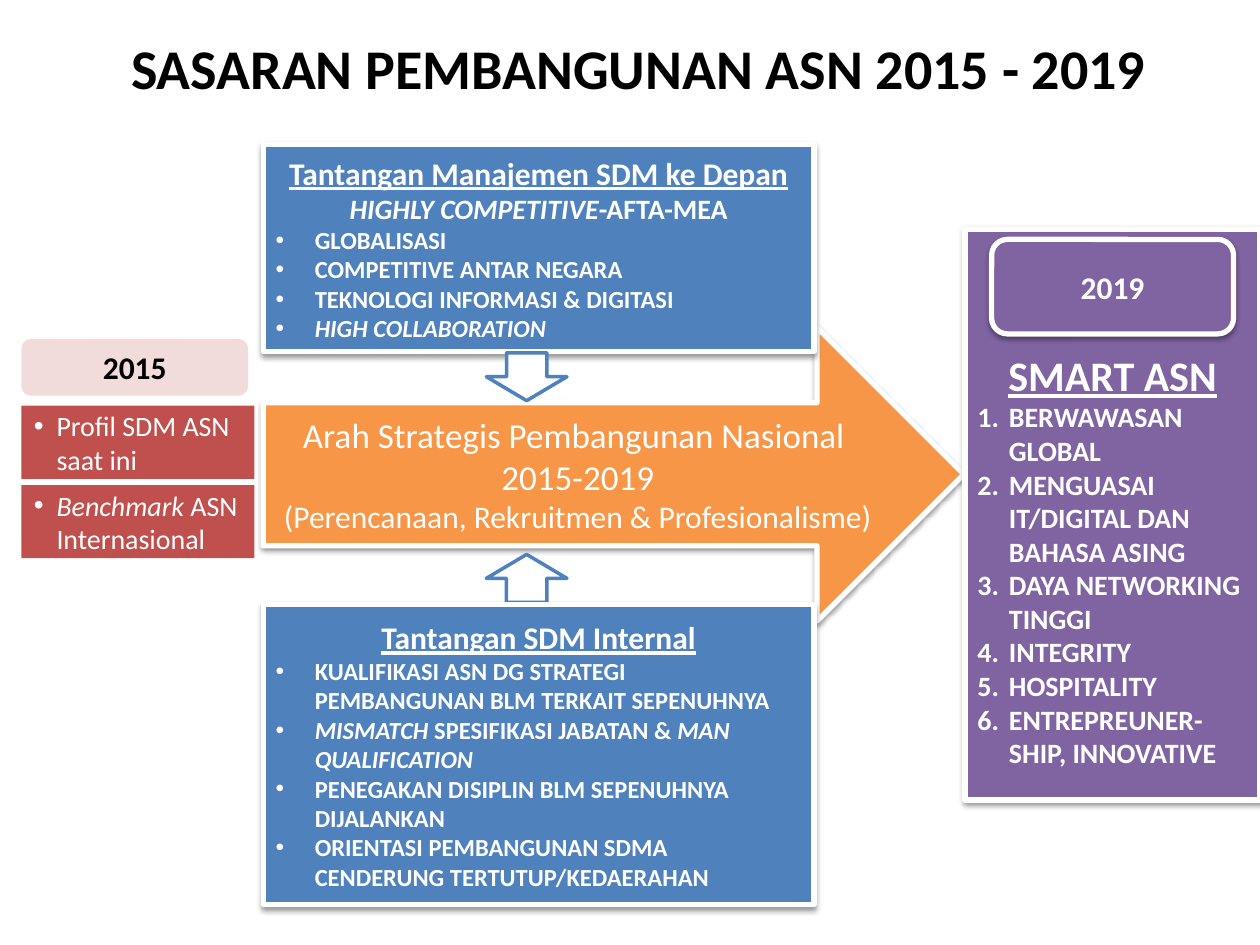
from lxml.etree import SubElement
from pptx import Presentation
from pptx.dml.color import RGBColor as RGB
from pptx.enum.shapes import MSO_SHAPE as Kind
from pptx.enum.text import MSO_ANCHOR as Anchor, PP_ALIGN as Align
from pptx.oxml.ns import qn
from pptx.util import Inches, Pt

HEX = {
    "white": "FFFFFF", "black": "000000", "blue": "4F81BD",
    "orange": "F79646", "purple": "8064A2", "red": "C0504D",
    "pink": "F2DCDB",
}


def color(name):
    return RGB.from_string(HEX[name])


def add_shade(shape):
    """Soft shadow straight below the shape."""
    effects = shape._element.spPr.find(qn("a:effectLst"))
    shade = SubElement(effects, qn("a:outerShdw"), blurRad=str(Pt(3.1)),
                       dist=str(Pt(1.6)), dir="5400000", rotWithShape="0")
    tint = SubElement(shade, qn("a:srgbClr"), val=HEX["black"])
    SubElement(tint, qn("a:alpha"), val="38000")


def add_box(shapes, kind, box, fill, line=None, width=3, shade=False):
    shape = shapes.add_shape(kind, *map(Inches, box))
    shape.shadow.inherit = False
    shape.fill.solid()
    shape.fill.fore_color.rgb = color(fill)
    if line:
        shape.line.color.rgb = color(line)
        shape.line.width = Pt(width)
    else:
        shape.line.fill.background()
    if shade:
        add_shade(shape)
    frame = shape.text_frame
    frame.word_wrap = True
    frame.vertical_anchor = Anchor.MIDDLE
    return shape


def add_panel(shapes, kind, box, fill):
    return add_box(shapes, kind, box, fill, "white", shade=True)


def add_line(frame, text, size, bold=True, under=False, tone="white",
             indent=0, mark=None):
    """One paragraph; words between asterisks are italic."""
    para = frame.paragraphs[0]
    if para.runs:
        para = frame.add_paragraph()
    for i, part in enumerate(text.split("*")):
        if part:
            run = para.add_run()
            run.text = part
            if i % 2:
                run.font.italic = True
    font = para.font
    font.name, font.size, font.bold = "Calibri", Pt(size), bold
    font.underline = under
    font.color.rgb = color(tone)
    para.alignment = Align.LEFT if mark else Align.CENTER
    if mark:
        props = para._p.get_or_add_pPr()
        props.set("marL", str(Inches(indent)))
        props.set("indent", str(-Inches(indent)))
        if mark == "1.":
            bullet = SubElement(props, qn("a:buAutoNum"), type="arabicPeriod")
        else:
            SubElement(props, qn("a:buFont"), typeface="Arial")
            bullet = SubElement(props, qn("a:buChar"), char=mark)
        # bullets come before the default run properties
        rest = props.find(qn("a:defRPr"))
        if rest is not None:
            props.remove(rest)
            props.append(rest)


def add_title(slide, box):
    title = slide.shapes.title
    title.left, title.top, title.width, title.height = map(Inches, box)
    add_line(title.text_frame, "SASARAN PEMBANGUNAN ASN 2015 - 2019 ", 32,
             tone="black")


def add_course(slide, box):
    arrow = add_panel(slide.shapes, Kind.RIGHT_ARROW, box, "orange")
    arrow.adjustments[0] = 0.487
    for text, size in (("Arah Strategis Pembangunan Nasional ", 20),
                       ("2015-2019", 20),
                       ("(Perencanaan, Rekruitmen & Profesionalisme)", 18)):
        add_line(arrow.text_frame, text, size, bold=False)


def add_issues(slide, box, head, items, sub=None):
    frame = add_panel(slide.shapes, Kind.RECTANGLE, box, "blue").text_frame
    add_line(frame, head, 18, under=True)
    if sub:
        add_line(frame, sub, 16)
    for item in items:
        add_line(frame, item, 14, indent=0.31, mark="•")


def add_link(slide, box, turn):
    arrow = add_box(slide.shapes, Kind.RIGHT_ARROW, box, "white", "blue", 2)
    arrow.rotation = turn


def add_goal(slide, box):
    left, top, width, height = box
    shapes = slide.shapes.add_group_shape().shapes
    frame = add_panel(shapes, Kind.RECTANGLE, box, "purple").text_frame
    frame.margin_top = Inches(0.76)  # room for the year badge
    add_line(frame, "SMART ASN", 24, under=True)
    for item in ("BERWAWASAN GLOBAL", "MENGUASAI IT/DIGITAL DAN BAHASA ASING",
                 "DAYA NETWORKING TINGGI", "INTEGRITY", "HOSPITALITY",
                 "ENTREPREUNER-SHIP, INNOVATIVE"):
        add_line(frame, item, 16, indent=0.25, mark="1.")
    badge = add_panel(shapes, Kind.ROUNDED_RECTANGLE,
                      (left + 0.21, top + 0.08, width - 0.42, 0.75), "purple")
    add_line(badge.text_frame, "2019", 18)


def add_start(slide, box):
    left, top, width, height = box
    year = add_box(slide.shapes, Kind.ROUNDED_RECTANGLE,
                   (left, top, width - 0.05, 0.45), "pink")
    add_line(year.text_frame, "2015", 18, tone="black")
    tall, step = 0.58, 0.63
    first = top + height - tall - step
    for i, text in enumerate(("Profil SDM ASN saat ini",
                              "*Benchmark* ASN Internasional")):
        card = add_box(slide.shapes, Kind.RECTANGLE,
                       (left, first + i * step, width, tall), "red")
        add_line(card.text_frame, text, 16, bold=False, indent=0.18, mark="•")


def main():
    deck = Presentation()
    deck.slide_width, deck.slide_height = Inches(10), Inches(7.5)
    slide = deck.slides.add_slide(deck.slide_layouts[5])

    add_title(slide, (0.78, 0.21, 8.68, 0.64))
    # Strategic direction, with the challenges above and below it
    add_course(slide, (2.09, 2.6, 5.56, 2.33))
    add_issues(slide, (2.09, 1.15, 4.37, 1.64),
               "Tantangan Manajemen SDM ke Depan",
               ("GLOBALISASI", "COMPETITIVE ANTAR NEGARA",
                "TEKNOLOGI INFORMASI & DIGITASI", "*HIGH COLLABORATION*"),
               sub="*HIGHLY COMPETITIVE*-AFTA-MEA")
    add_link(slide, (3.99, 4.27, 0.38, 0.64), 270)
    add_link(slide, (3.99, 2.67, 0.38, 0.64), 90)
    # Target year
    add_goal(slide, (7.66, 1.82, 2.34, 4.53))
    add_issues(slide, (2.09, 4.8, 4.37, 2.38), "Tantangan SDM Internal",
               ("KUALIFIKASI ASN DG STRATEGI PEMBANGUNAN BLM TERKAIT "
                "SEPENUHNYA",
                "*MISMATCH* SPESIFIKASI JABATAN & *MAN QUALIFICATION*",
                "PENEGAKAN DISIPLIN BLM SEPENUHNYA DIJALANKAN",
                "ORIENTASI PEMBANGUNAN SDMA CENDERUNG TERTUTUP/KEDAERAHAN"))
    # Starting year
    add_start(slide, (0.17, 2.69, 1.85, 1.74))
    deck.save("out.pptx")


if __name__ == "__main__":
    main()
